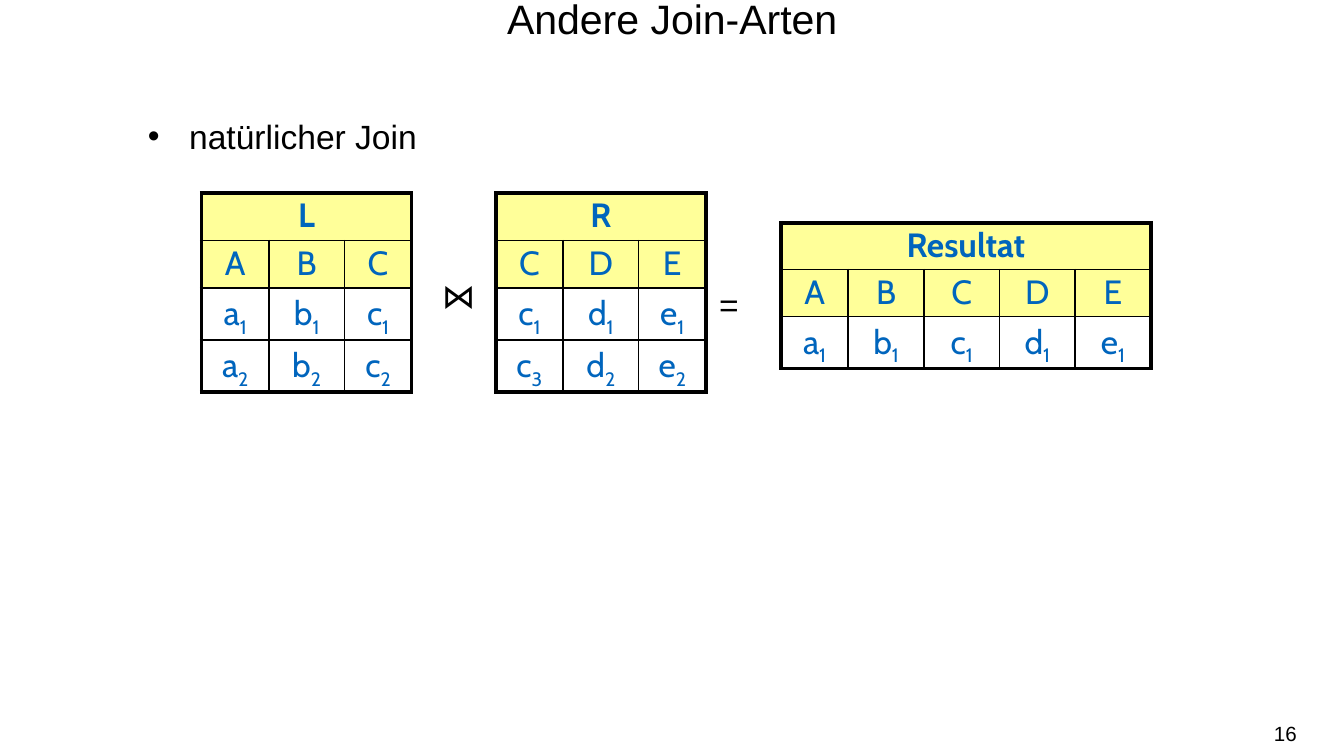
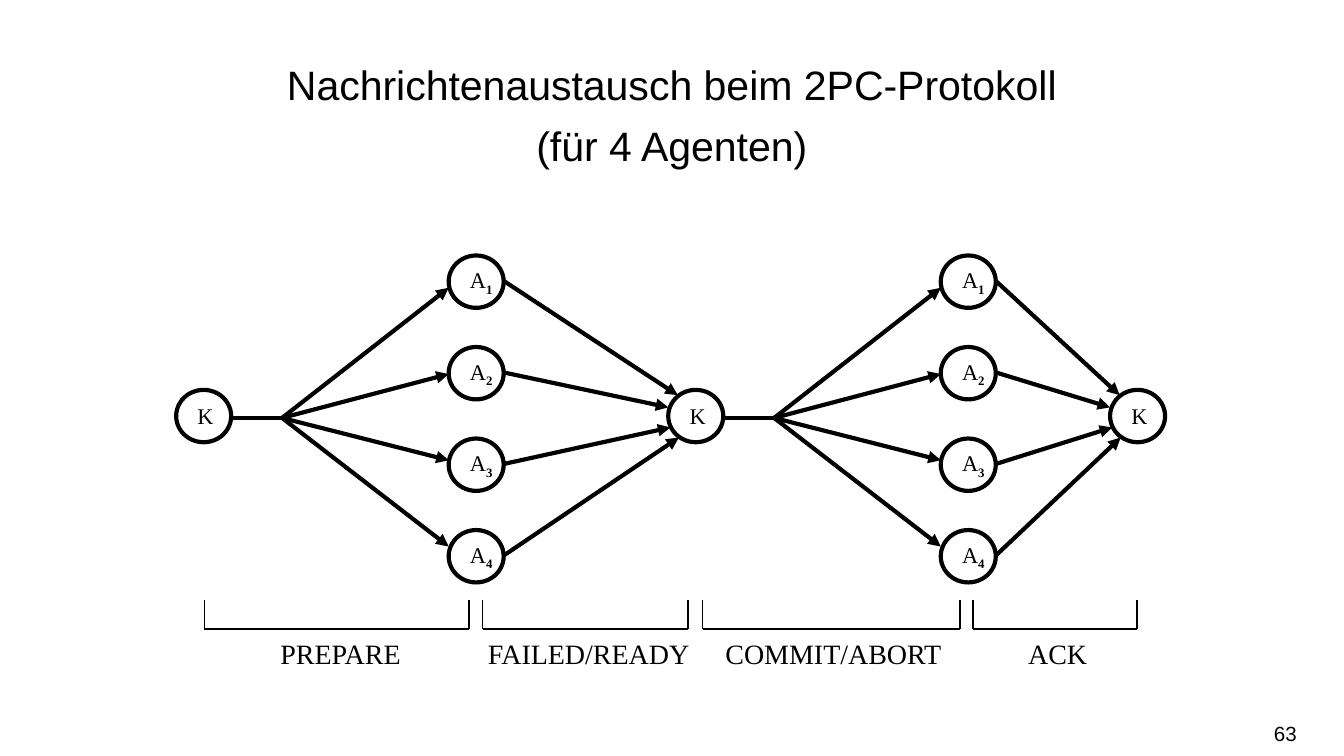
from lxml import etree
from pptx import Presentation
from pptx.dml.color import RGBColor
from pptx.enum import shapes, text
from pptx.oxml.ns import qn
from pptx import util as u

COLORS = {"ink": "000000", "cell_text": "0065BD", "header": "FFFF99"}
SANS, SERIF, TABLE_FONT = "Arial", "Times New Roman", "Cabin"
TITLE_ONLY, TITLE_AND_BODY = 5, 1
THICK, MEDIUM, THIN = 2.25, 1, 0.75
NODE_WIDTH, NODE_HEIGHT = 1.04, 0.99


def cm(*lengths):
    return [u.Cm(length) for length in lengths]


def color(name):
    return RGBColor.from_string(COLORS[name])


def format_runs(paragraph, size, font=SANS, ink="ink", bold=False):
    for run in paragraph.runs:
        run.font.size = u.Pt(size)
        run.font.name = font
        run.font.bold = bold
        run.font.color.rgb = color(ink)


def add_subscript(paragraph, subscript):
    run = paragraph.add_run()
    run.text = subscript
    run._r.get_or_add_rPr().set("baseline", "-25000")
    return run


def place(shape, box):
    shape.left, shape.top, shape.width, shape.height = cm(*box)


def add_label(slide, box, label, size, font=SANS, wrap=True):
    shape = slide.shapes.add_textbox(*cm(*box))
    frame = shape.text_frame
    frame.text = label
    frame.word_wrap = wrap
    frame.auto_size = text.MSO_AUTO_SIZE.SHAPE_TO_FIT_TEXT
    format_runs(frame.paragraphs[0], size, font)
    return shape


def add_page_number(slide, number):
    frame = add_label(slide, (18.82, 13.49, 5.69, 0.76), number, 11).text_frame
    frame.auto_size = text.MSO_AUTO_SIZE.NONE
    frame.vertical_anchor = text.MSO_ANCHOR.MIDDLE
    frame.margin_left = frame.margin_right = 0
    frame.paragraphs[0].alignment = text.PP_ALIGN.RIGHT


def start_slide(presentation, layout, title, title_box, number):
    slide = presentation.slides.add_slide(presentation.slide_layouts[layout])
    place(slide.shapes.title, title_box)
    frame = slide.shapes.title.text_frame
    frame.text = title
    frame.word_wrap = True
    frame.auto_size = text.MSO_AUTO_SIZE.NONE
    frame.vertical_anchor = text.MSO_ANCHOR.TOP
    paragraph = frame.paragraphs[0]
    paragraph.alignment = text.PP_ALIGN.CENTER
    paragraph.line_spacing = 1.25
    format_runs(paragraph, 22)
    add_page_number(slide, number)
    return slide


def fill_bullet(placeholder, box, label):
    place(placeholder, box)
    frame = placeholder.text_frame
    frame.text = label
    frame.auto_size = text.MSO_AUTO_SIZE.NONE
    paragraph = frame.paragraphs[0]
    properties = paragraph._p.get_or_add_pPr()
    properties.set("marL", str(u.Cm(0.78)))
    properties.set("indent", str(-u.Cm(0.78)))
    etree.SubElement(properties, qn("a:buChar")).set("char", "•")
    paragraph.space_before = u.Pt(0)
    format_runs(paragraph, 18)


def set_borders(cell, widths):
    properties = cell._tc.get_or_add_tcPr()
    for position, (side, width) in enumerate(widths.items()):
        line = etree.Element(qn(f"a:ln{side}"), w=str(u.Pt(width)))
        fill = etree.SubElement(line, qn("a:solidFill"))
        etree.SubElement(fill, qn("a:srgbClr"), val=COLORS["ink"])
        properties.insert(position, line)


def fill_cell(cell, label, is_name, is_header):
    cell.margin_left = cell.margin_right = 0
    cell.margin_top = cell.margin_bottom = u.Cm(0.1)
    paragraph = cell.text_frame.paragraphs[0]
    paragraph.alignment = text.PP_ALIGN.CENTER
    paragraph.line_spacing = 0.9
    if is_header:
        cell.fill.solid()
        cell.fill.fore_color.rgb = color("header")
        paragraph.text = label
    else:
        cell.fill.background()
        paragraph.text = label[0]
        add_subscript(paragraph, label[1:])
    format_runs(paragraph, 18, TABLE_FONT, "cell_text", is_name)


def add_relation(slide, left, top, name, widths, rows):
    row_height = 0.87
    grid = [[name] + [""] * (len(widths) - 1)] + [row.split() for row in rows]
    frame = slide.shapes.add_table(
        len(grid), len(widths), *cm(left, top, sum(widths), row_height * len(grid)))
    table = frame.table
    table.first_row = table.horz_banding = False
    for column, width in zip(table.columns, widths):
        column.width = u.Cm(width)
    for row in table.rows:
        row.height = u.Cm(row_height)
    table.cell(0, 0).merge(table.cell(0, len(widths) - 1))
    for i, labels in enumerate(grid):
        for j, label in enumerate(labels):
            cell = table.cell(i, j)
            fill_cell(cell, label, i == 0, i < 2)
            outer = {"L": j == 0, "R": i == 0 or j == len(widths) - 1,
                     "T": i == 0, "B": i == len(grid) - 1}
            set_borders(cell, {side: THICK if edge else MEDIUM
                               for side, edge in outer.items()})


def build_join_slide(presentation):
    slide = start_slide(presentation, TITLE_AND_BODY, "Andere Join-Arten",
                        (3.18, -0.48, 19.05, 2.39), "16")
    fill_bullet(slide.placeholders[1], (2.54, 2.06, 8.1, 1.02), "natürlicher Join")
    operand_widths = [1.27, 1.43, 1.27]
    add_relation(slide, 3.81, 3.65, "L", operand_widths,
                 ["A B C", "a1 b1 c1", "a2 b2 c2"])
    add_relation(slide, 9.37, 3.65, "R", operand_widths,
                 ["C D E", "c1 d1 e1", "c3 d2 e2"])
    add_label(slide, (8.1, 5.08, 1.12, 1.02), "⋈", 18, "Calibri")
    add_label(slide, (13.34, 5.24, 1.42, 1.02), "=", 18)
    add_relation(slide, 14.76, 4.21, "Resultat", [1.27] + [1.43] * 4,
                 ["A B C D E", "a1 b1 c1 d1 e1"])


def add_line(slide, start, end, width, arrow=False):
    connector = slide.shapes.add_connector(
        shapes.MSO_CONNECTOR.STRAIGHT, *cm(*start, *end))
    connector.line.color.rgb = color("ink")
    connector.line.width = u.Pt(width)
    if arrow:
        etree.SubElement(connector.line._get_or_add_ln(), qn("a:tailEnd"), type="triangle")
    etree.SubElement(connector._element.spPr, qn("a:effectLst"))


def add_node(container, left, top, label, subscript=""):
    node = container.shapes.add_shape(
        shapes.MSO_SHAPE.OVAL, *cm(left, top, NODE_WIDTH, NODE_HEIGHT))
    node.shadow.inherit = False
    node.fill.background()
    node.line.color.rgb = color("ink")
    node.line.width = u.Pt(THICK)
    frame = node.text_frame
    frame.word_wrap = False
    frame.vertical_anchor = text.MSO_ANCHOR.MIDDLE
    paragraph = frame.paragraphs[0]
    paragraph.text = label
    paragraph.alignment = text.PP_ALIGN.LEFT
    run = add_subscript(paragraph, subscript) if subscript else None
    format_runs(paragraph, 12, SERIF)
    if run:
        run.font.bold = True


def add_message_round(slide, left, top, next_left):
    axis = top + 3.07
    fork = (left + 2, axis)
    agent_left = left + 5.15
    arrivals = [(0.18, 2.64), (0, 2.87), (0.04, 3.25), (0.2, 3.44)]
    agents = slide.shapes.add_group_shape()
    add_line(slide, (left + NODE_WIDTH, axis), fork, THICK)
    for i, (x, y) in enumerate(arrivals):
        agent_top = top + 1.73 * i
        add_node(agents, agent_left, agent_top, "A", str(i + 1))
        add_line(slide, fork, (agent_left, top + 0.61 + 1.63 * i), THICK, True)
        add_line(slide, (agent_left + NODE_WIDTH, agent_top + 0.48),
                 (next_left + x, top + y), THICK, True)


def add_phase(slide, top, left, right, label, label_left, label_width):
    bottom = top + 0.54
    add_line(slide, (right, bottom), (left, bottom), THIN)
    for x in (left, right):
        add_line(slide, (x, bottom), (x, top), THIN)
    add_label(slide, (label_left, bottom + 0.02, label_width, 0.89),
              label, 15, SERIF, wrap=False)


def build_protocol_slide(presentation):
    slide = start_slide(presentation, TITLE_ONLY,
                        "Nachrichtenaustausch beim 2PC-Protokoll (für 4 Agenten)",
                        (4.6, 0.76, 16.2, 2.39), "63")
    top = 4.83
    coordinators = [3.33, 12.63, 20.98]
    for left in coordinators:
        add_node(slide, left, top + 2.54, "K")
    for left, next_left in zip(coordinators, coordinators[1:]):
        add_message_round(slide, left, top, next_left)
    phases = [
        (3.86, 8.86, "PREPARE", 5.05, 2.82),
        (9.12, 13, "FAILED/READY", 8.97, 4.37),
        (13.28, 18.14, "COMMIT/ABORT", 13.46, 4.65),
        (18.39, 21.49, "ACK", 19.18, 1.65),
    ]
    for phase in phases:
        add_phase(slide, 11.35, *phase)


def main():
    presentation = Presentation()
    presentation.slide_width, presentation.slide_height = cm(25.4, 14.29)
    build_join_slide(presentation)
    build_protocol_slide(presentation)
    presentation.save("out.pptx")


if __name__ == "__main__":
    main()
